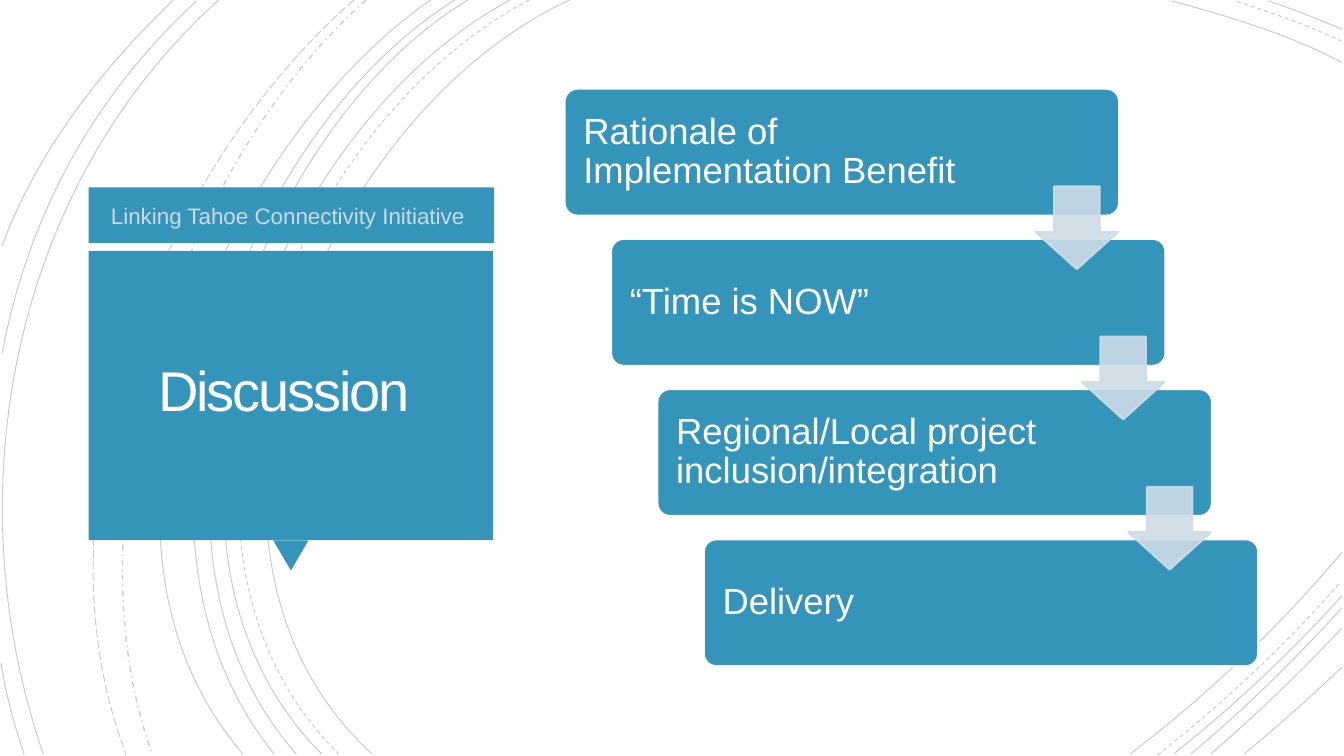
from dataclasses import dataclass

from lxml.etree import SubElement
from pptx import Presentation
from pptx.dml.color import RGBColor
from pptx.enum.dml import MSO_LINE as Dash
from pptx.enum.shapes import MSO_SHAPE as Preset
from pptx.enum.text import MSO_ANCHOR as Anchor, MSO_AUTO_SIZE as AutoSize, PP_ALIGN as Align
from pptx.oxml.ns import qn
from pptx.util import Inches, Pt

COLORS = {
    "arc": "000000",
    "panel": "3494BA",
    "arrow": "CEDCE7",
    "subtitle": "CEDBE6",
    "title": "FFFEFF",
    "white": "FFFFFF",
}


@dataclass
class Arc:
    start: tuple[float, float]
    first_control: tuple[float, float]
    second_control: tuple[float, float]
    end: tuple[float, float]
    dash: Dash = Dash.SOLID
    width: float = 0.75


@dataclass
class Block:
    preset: Preset
    left: float
    top: float
    width: float
    height: float
    color: str = "panel"
    outline: str | None = None
    opacity: int = 100
    rotation: int = 0
    adjustments: tuple[float, ...] = ()


@dataclass
class Label:
    text: str
    size: int
    color: str
    insets: tuple[float, float, float, float]
    align: Align = Align.LEFT
    line_spacing: float = 1.0


ARCS = [
    Arc((5.65, 0), (3.15, 1.15), (1.43, 5.4), (3.69, 7.48)),
    Arc((13.31, 0.62), (12.78, 0.34), (12.18, 0.16), (11.62, 0.01)),
    Arc((11.21, 7.48), (11.97, 6.9), (12.69, 6.22), (13.31, 5.48)),
    Arc((5.25, 0), (2.85, 1.25), (1.23, 5.37), (3.36, 7.48), Dash.DASH),
    Arc((13.31, 0.41), (12.97, 0.25), (12.6, 0.12), (12.25, 0.01), Dash.DASH),
    Arc((11.48, 7.49), (12.13, 6.98), (12.75, 6.4), (13.3, 5.77), Dash.DASH),
    Arc((5.06, 0), (2.7, 1.27), (1.1, 5.37), (3.19, 7.48)),
    Arc((13.31, 0.29), (13.07, 0.19), (12.83, 0.09), (12.58, 0.01)),
    Arc((11.64, 7.48), (12.23, 7.01), (12.8, 6.48), (13.31, 5.91)),
    Arc((4.64, 0), (2.44, 1.33), (1.1, 5.41), (2.94, 7.48)),
    Arc((11.81, 7.48), (12.34, 7.04), (12.84, 6.55), (13.31, 6.03)),
    Arc((4.51, 0), (2.31, 1.38), (0.97, 5.33), (2.72, 7.48)),
    Arc((12.01, 7.48), (12.46, 7.09), (12.9, 6.67), (13.31, 6.23)),
    Arc((4.27, 0), (2.17, 1.47), (0.53, 5.29), (2.41, 7.48)),
    Arc((12.34, 7.48), (12.67, 7.21), (12.99, 6.92), (13.31, 6.62)),
    Arc((3.63, 0), (1.76, 1.66), (0.65, 5.09), (1.51, 7.48), Dash.DASH_DOT, 1),
    Arc((3.51, 0), (1.57, 1.69), (0.29, 4.99), (1.25, 7.48), Dash.LONG_DASH),
    Arc((2.17, 0), (0.11, 1.85), (-0.46, 4.9), (0.43, 7.48)),
    Arc((1.95, 0.01), (0.92, 0.96), (0.28, 2.14), (0.02, 3.51)),
    Arc((0.01, 6.58), (0.06, 6.89), (0.14, 7.19), (0.24, 7.48)),
    Arc((1.72, 0), (1, 0.69), (0.37, 1.5), (0.02, 2.44)),
]
STEPS = [
    "Rationale of Implementation Benefit",
    "“Time is NOW”",
    "Regional/Local project inclusion/integration",
    "Delivery",
]
STEP_RIGHT, STEP_DOWN = 0.46, 1.49


def rgb(name: str) -> RGBColor:
    return RGBColor.from_string(COLORS[name])


def apply_format(target, values: dict) -> None:
    for name, value in values.items():
        setattr(target, name, value)


def set_opacity(shape, percent: int) -> None:
    for color in shape._element.spPr.iter(qn("a:srgbClr")):
        SubElement(color, qn("a:alpha"), val=str(percent * 1000))


def draw_arc(slide, arc: Arc) -> None:
    start, *points = [
        (Inches(x), Inches(y))
        for x, y in (arc.start, arc.first_control, arc.second_control, arc.end)
    ]
    builder = slide.shapes.build_freeform(*start)
    builder.add_line_segments(points, close=False)
    shape = builder.convert_to_shape()
    segments = list(shape._element.iter(qn("a:lnTo")))
    outline = segments[0].getparent()
    curve = SubElement(outline, qn("a:cubicBezTo"))
    for segment in segments:
        curve.append(segment[0])
        outline.remove(segment)
    shape.shadow.inherit = False
    shape.fill.background()
    shape.line.color.rgb = rgb("arc")
    apply_format(shape.line, {"width": Pt(arc.width), "dash_style": arc.dash})
    set_opacity(shape, 20)


def draw_block(slide, block: Block):
    box = map(Inches, (block.left, block.top, block.width, block.height))
    shape = slide.shapes.add_shape(block.preset, *box)
    for index, value in enumerate(block.adjustments):
        shape.adjustments[index] = value
    shape.rotation = block.rotation
    shape.shadow.inherit = False
    shape.fill.solid()
    shape.fill.fore_color.rgb = rgb(block.color)
    if block.outline:
        shape.line.color.rgb = rgb(block.outline)
        shape.line.width = Pt(1.5)
    else:
        shape.line.fill.background()
    if block.opacity < 100:
        set_opacity(shape, block.opacity)
    return shape


def write_label(shape, label: Label):
    left, top, right, bottom = map(Inches, label.insets)
    frame = shape.text_frame
    apply_format(frame, {
        "word_wrap": True,
        "auto_size": AutoSize.NONE,
        "vertical_anchor": Anchor.MIDDLE,
        "margin_left": left,
        "margin_top": top,
        "margin_right": right,
        "margin_bottom": bottom,
    })
    paragraph = frame.paragraphs[0]
    apply_format(paragraph, {"alignment": label.align, "line_spacing": label.line_spacing})
    run = paragraph.add_run()
    run.text = label.text
    apply_format(run.font, {"name": "Arial", "size": Pt(label.size)})
    run.font.color.rgb = rgb(label.color)
    return run


def draw_title(slide) -> None:
    header = draw_block(slide, Block(Preset.RECTANGLE, 0.88, 1.86, 4.02, 0.55))
    write_label(header, Label("Linking Tahoe Connectivity Initiative", 16, "subtitle",
                              (0.22, 0.05, 0.1, 0.05)))
    draw_block(slide, Block(Preset.ISOSCELES_TRIANGLE, 2.71, 5.36, 0.35, 0.3, rotation=180))
    draw_block(slide, Block(Preset.RECTANGLE, 0.88, 2.49, 4.01, 2.87))
    title = slide.shapes.title
    apply_format(title, {"left": Inches(0.97), "top": Inches(2.57),
                         "width": Inches(3.83), "height": Inches(2.69)})
    run = write_label(title, Label("Discussion ", 40, "title", (0.25,) * 4, Align.CENTER, 0.85))
    run.font._element.set("spc", "-150")
    slide.shapes._spTree.append(title._element)


def draw_steps(slide) -> None:
    for index, text in enumerate(STEPS):
        step = draw_block(slide, Block(
            Preset.ROUNDED_RECTANGLE, 5.6 + index * STEP_RIGHT, 0.88 + index * STEP_DOWN,
            5.5, 1.26, outline="white", adjustments=(0.1,)))
        write_label(step, Label(text, 26, "white", (0.15, 0.11, 1.4, 0.11), line_spacing=0.9))
    for index in range(len(STEPS) - 1):
        draw_block(slide, Block(
            Preset.DOWN_ARROW, 10.27 + index * STEP_RIGHT, 1.85 + index * STEP_DOWN,
            0.82, 0.82, "arrow", "arrow", 90, adjustments=(0.55, 0.45)))


def main() -> None:
    presentation = Presentation()
    apply_format(presentation, {"slide_width": Inches(13.33), "slide_height": Inches(7.5)})
    slide = presentation.slides.add_slide(presentation.slide_layouts.get_by_name("Title Only"))
    for arc in ARCS:
        draw_arc(slide, arc)
    draw_title(slide)
    draw_steps(slide)
    presentation.save("out.pptx")


if __name__ == "__main__":
    main()
